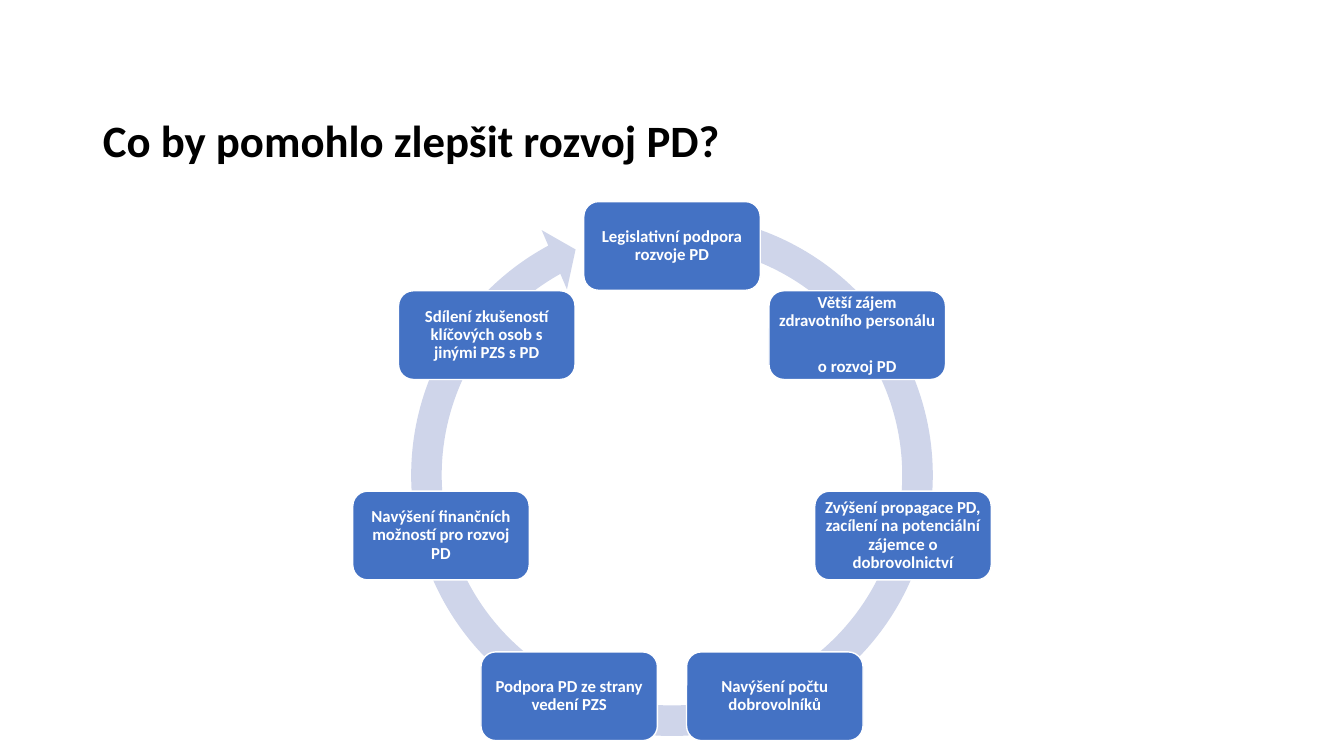
import math
import pptx
import pptx.util
import pptx.dml.color
import pptx.enum.shapes
import pptx.enum.text

Inches = pptx.util.Inches
Shapes = pptx.enum.shapes.MSO_SHAPE
Align = pptx.enum.text.PP_ALIGN
Anchor = pptx.enum.text.MSO_ANCHOR

COLOURS = {"title": "000000", "ring": "CFD5EA", "box": "4472C4", "light": "FFFFFF"}
STEPS = [
    ["Legislativní podpora rozvoje PD"],
    ["Větší zájem zdravotního personálu ", "o rozvoj PD"],
    ["Zvýšení propagace PD, zacílení na potenciální zájemce o dobrovolnictví"],
    ["Navýšení počtu dobrovolníků"],
    ["Podpora PD ze strany vedení PZS"],
    ["Navýšení finančních možností pro rozvoj PD"],
    ["Sdílení zkušeností klíčových osob s jinými PZS s PD"],
]
SLIDE_WIDTH, SLIDE_HEIGHT = 13.33, 7.5
CENTRE_X, CENTRE_Y, RADIUS = SLIDE_WIDTH / 2, 4.79, 2.35
BOX_WIDTH, BOX_HEIGHT = 1.75, 0.88
RING_SIZE, RING_TOP = 5.51, 1.96


def colour(name):
    return pptx.dml.color.RGBColor.from_string(COLOURS[name])


def add_text(para, text, size, colour_name):
    para.line_spacing = 0.9
    span = para.add_run()
    span.text = text
    span.font.name = "Calibri"
    span.font.size = pptx.util.Pt(size)
    span.font.bold = True
    span.font.color.rgb = colour(colour_name)


deck = pptx.Presentation()
deck.slide_width = Inches(SLIDE_WIDTH)
deck.slide_height = Inches(SLIDE_HEIGHT)
page = deck.slides.add_slide(deck.slide_layouts[5])

title = page.shapes.title
title.left, title.top = Inches(0.92), Inches(0.99)
title.width, title.height = Inches(11.5), Inches(0.86)
title.text_frame.vertical_anchor = Anchor.MIDDLE
title.text_frame.paragraphs[0].alignment = Align.LEFT
add_text(title.text_frame.paragraphs[0], "Co by pomohlo zlepšit rozvoj PD?", 32, "title")

ring = page.shapes.add_shape(
    Shapes.CIRCULAR_ARROW,
    Inches(CENTRE_X - RING_SIZE / 2), Inches(RING_TOP),
    Inches(RING_SIZE), Inches(RING_SIZE),
)
for index, value in enumerate([0.055, 3.307, 144.827, 169.691, 0.058]):
    ring.adjustments[index] = value
ring.shadow.inherit = False
ring.fill.solid()
ring.fill.fore_color.rgb = colour("ring")
ring.line.fill.background()

for index, lines in enumerate(STEPS):
    angle = 2 * math.pi * index / len(STEPS)
    box = page.shapes.add_shape(
        Shapes.ROUNDED_RECTANGLE,
        Inches(CENTRE_X + RADIUS * math.sin(angle) - BOX_WIDTH / 2),
        Inches(CENTRE_Y - RADIUS * math.cos(angle) - BOX_HEIGHT / 2),
        Inches(BOX_WIDTH), Inches(BOX_HEIGHT),
    )
    box.shadow.inherit = False
    box.fill.solid()
    box.fill.fore_color.rgb = colour("box")
    box.line.color.rgb = colour("light")
    box.line.width = pptx.util.Pt(1)
    frame = box.text_frame
    frame.word_wrap = True
    frame.vertical_anchor = Anchor.MIDDLE
    frame.margin_left = frame.margin_right = Inches(0.05)
    frame.margin_top = frame.margin_bottom = Inches(0.05)
    para = frame.paragraphs[0]
    para.alignment = Align.CENTER
    for number, line in enumerate(lines):
        if number:
            para.add_line_break()
        add_text(para, line, 12, "light")

deck.save("out.pptx")
